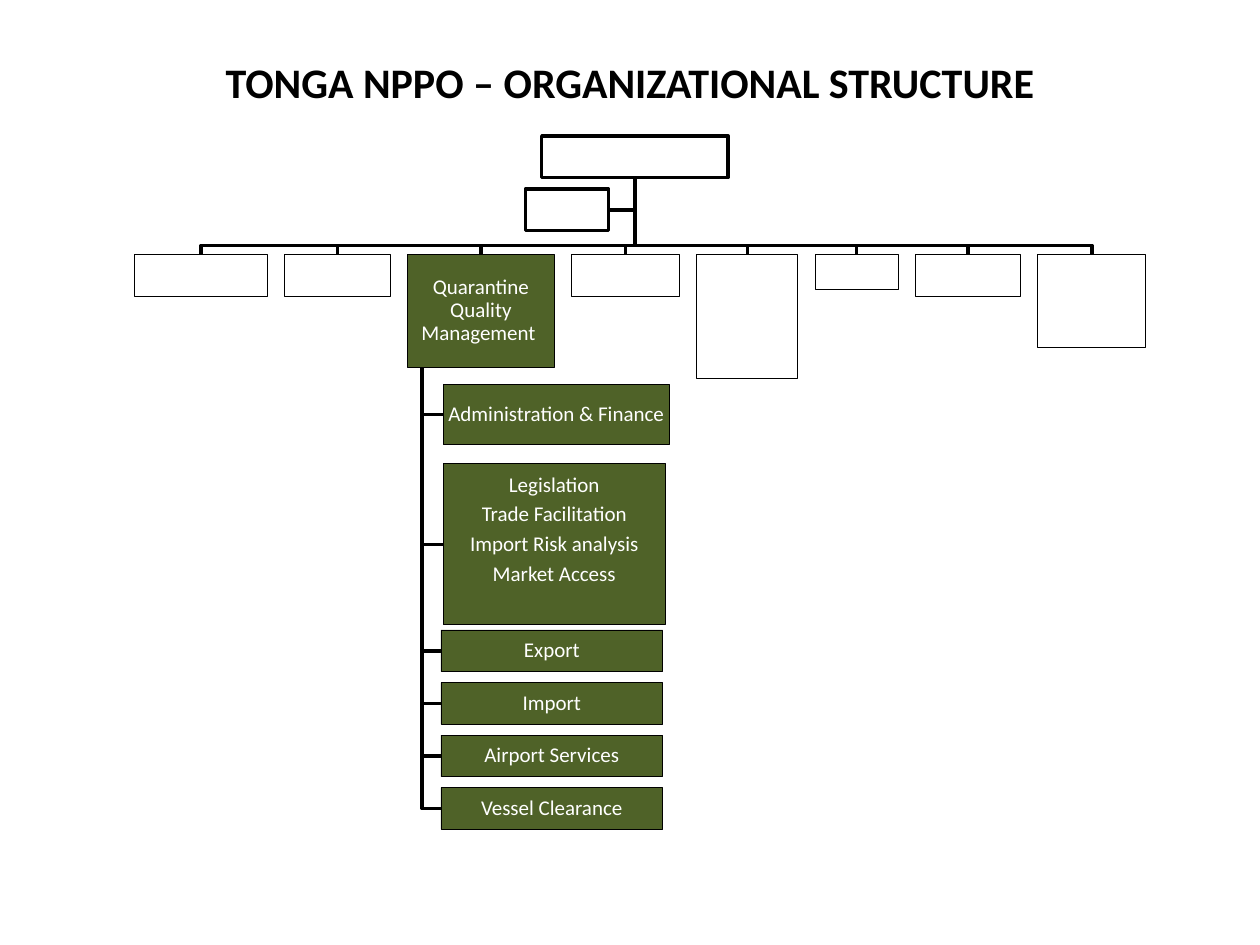
"""Build the organizational structure slide of the Tonga NPPO."""
from pptx import Presentation
from pptx.dml.color import RGBColor
from pptx.enum.shapes import MSO_SHAPE
from pptx.enum.text import MSO_ANCHOR, PP_ALIGN
from pptx.util import Cm, Pt

RECTANGLE = MSO_SHAPE.RECTANGLE
MIDDLE = MSO_ANCHOR.MIDDLE
CENTER = PP_ALIGN.CENTER

BLACK = RGBColor(0x00, 0x00, 0x00)
WHITE = RGBColor(0xFF, 0xFF, 0xFF)
GREEN = RGBColor(0x4F, 0x62, 0x28)

TITLE = "TONGA NPPO – ORGANIZATIONAL STRUCTURE"
TITLE_BOX = (1.27, 0.76, 22.86, 1.78)
HEAD_BOX = (10.92, 2.74, 3.76, 0.84)
ASSISTANT_BOX = (10.59, 3.81, 1.68, 0.84)

DEPARTMENTS = [
    (2.67, 0.84, []),
    (2.13, 0.84, []),
    (2.95, 2.27, ["Quarantine Quality Management "]),
    (2.18, 0.84, []),
    (2.03, 2.51, []),
    (1.68, 0.71, []),
    (2.11, 0.84, []),
    (2.18, 1.88, []),
]
DEPARTMENT_LEFT, DEPARTMENT_TOP, DEPARTMENT_GAP = 2.72, 5.13, 0.35
BUS_TOP = 4.95

LARGE_UNITS = [
    ((8.94, 7.75, 4.55, 1.22), ["Administration & Finance"], 0.03),
    ((8.94, 9.35, 4.47, 3.25),
     ["Legislation", "Trade Facilitation", "Import Risk analysis", "Market Access"], 0.62),
]
SMALL_UNITS = ["Export", "Import", "Airport Services", "Vessel Clearance"]
SMALL_LEFT, SMALL_TOP, SMALL_PITCH, SMALL_WIDTH, SMALL_HEIGHT = 8.89, 12.7, 1.06, 4.47, 0.84
SPINE_LEFT, SPINE_TOP = 8.51, 7.4

THIN, THICK = Pt(0.5), Pt(2)
INSET = 0.03
FRAME_FORMAT = {"word_wrap": True, "vertical_anchor": MIDDLE, "margin_left": Cm(INSET),
                "margin_right": Cm(INSET), "margin_top": Cm(INSET)}
PARAGRAPH_FORMAT = {"alignment": CENTER, "line_spacing": 0.9, "space_after": Pt(4)}
TITLE_FONT = {"name": "Calibri", "size": Pt(24), "bold": True}
BOX_FONT = {"name": "Calibri", "size": Pt(12), "bold": False}


def apply_format(target, values):
    for name, value in values.items():
        setattr(target, name, value)


def style_line(shape, width):
    shape.shadow.inherit = False
    shape.line.color.rgb = BLACK
    shape.line.width = width


def add_path(slide, points):
    start, *rest = [(Cm(x), Cm(y)) for x, y in points]
    builder = slide.shapes.build_freeform(*start)
    builder.add_line_segments(rest, close=False)
    shape = builder.convert_to_shape()
    shape.fill.background()
    style_line(shape, THICK)


def add_box(slide, box, lines=(), width=THIN, bottom_inset=INSET):
    shape = slide.shapes.add_shape(RECTANGLE, *map(Cm, box))
    shape.fill.solid()
    shape.fill.fore_color.rgb = GREEN if lines else WHITE
    style_line(shape, width)
    frame = shape.text_frame
    apply_format(frame, FRAME_FORMAT)
    frame.margin_bottom = Cm(bottom_inset)
    for index, line in enumerate(lines):
        paragraph = frame.add_paragraph() if index else frame.paragraphs[0]
        paragraph.text = line
        apply_format(paragraph, PARAGRAPH_FORMAT)
        apply_format(paragraph.font, BOX_FONT)
        paragraph.font.color.rgb = WHITE


def add_title(slide):
    title = slide.shapes.title
    apply_format(title, dict(zip(("left", "top", "width", "height"), map(Cm, TITLE_BOX))))
    title.text_frame.text = TITLE
    title.text_frame.vertical_anchor = MIDDLE
    paragraph = title.text_frame.paragraphs[0]
    paragraph.alignment = CENTER
    apply_format(paragraph.font, TITLE_FONT)
    paragraph.font.color.rgb = BLACK


def place_departments():
    left = DEPARTMENT_LEFT
    for width, height, lines in DEPARTMENTS:
        yield (left, DEPARTMENT_TOP, width, height), lines
        left += width + DEPARTMENT_GAP


def main():
    presentation = Presentation()
    presentation.slide_width, presentation.slide_height = Cm(25.4), Cm(19.05)
    slide = presentation.slides.add_slide(presentation.slide_layouts[5])
    add_title(slide)

    departments = list(place_departments())
    units = LARGE_UNITS + [
        ((SMALL_LEFT, SMALL_TOP + row * SMALL_PITCH, SMALL_WIDTH, SMALL_HEIGHT), [name], INSET)
        for row, name in enumerate(SMALL_UNITS)
    ]

    left, top, width, height = HEAD_BOX
    trunk, trunk_top = left + width / 2, top + height
    left, top, width, height = ASSISTANT_BOX
    middle = top + height / 2
    add_path(slide, [(trunk, trunk_top), (trunk, middle), (left + width, middle)])
    for (left, top, width, _), _ in departments:
        center = left + width / 2
        add_path(slide, [(trunk, trunk_top), (trunk, BUS_TOP), (center, BUS_TOP), (center, top)])
    for (left, top, _, height), _, _ in units:
        middle = top + height / 2
        add_path(slide, [(SPINE_LEFT, SPINE_TOP), (SPINE_LEFT, middle), (left, middle)])

    for box in (HEAD_BOX, ASSISTANT_BOX):
        add_box(slide, box, width=THICK)
    for box, lines in departments:
        add_box(slide, box, lines)
    for box, lines, bottom_inset in units:
        add_box(slide, box, lines, bottom_inset=bottom_inset)

    presentation.save("out.pptx")


if __name__ == "__main__":
    main()
